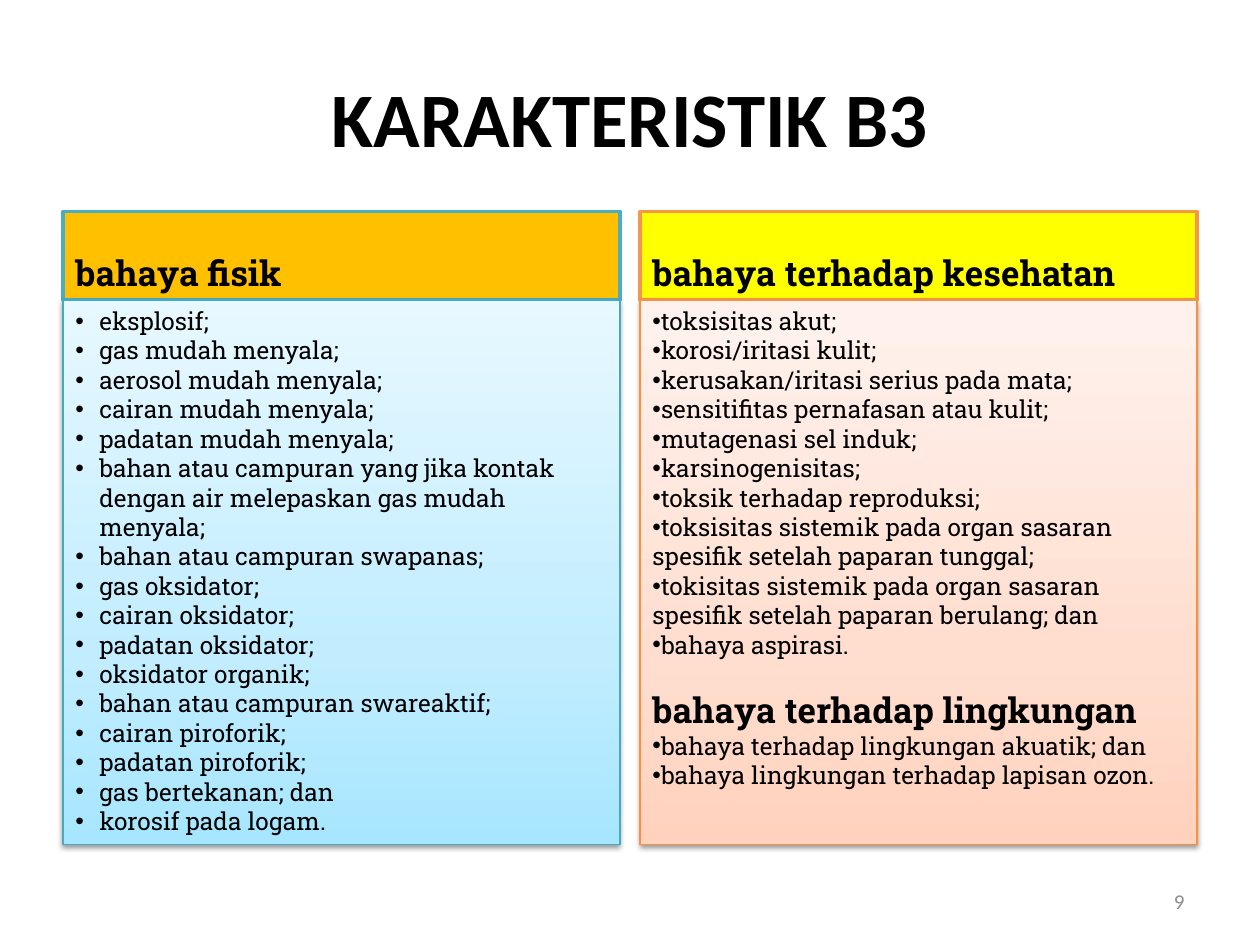
from copy import deepcopy
from lxml import etree
from pptx import Presentation
from pptx.dml.color import RGBColor
from pptx.enum.shapes import MSO_SHAPE
from pptx.enum.text import MSO_ANCHOR, PP_ALIGN
from pptx.oxml.ns import qn
from pptx.util import Inches, Pt

RECT = MSO_SHAPE.RECTANGLE
TOP, MIDDLE, BOTTOM = MSO_ANCHOR.TOP, MSO_ANCHOR.MIDDLE, MSO_ANCHOR.BOTTOM
LEFT, CENTER, RIGHT = PP_ALIGN.LEFT, PP_ALIGN.CENTER, PP_ALIGN.RIGHT
SLAB = "Roboto Slab"


def color(text):
    return RGBColor.from_string(text)


def write(shape, lines, size, font, bold=False, align=LEFT, anchor=TOP, ink="000000"):
    frame = shape.text_frame
    frame.word_wrap = True
    frame.vertical_anchor = anchor
    frame.text = "\n".join(lines)
    for para in frame.paragraphs:
        para.alignment = align
        for run in para.runs:
            run.font.size = Pt(size)
            run.font.name = font
            run.font.bold = bold
            run.font.color.rgb = color(ink)


physical = [
    "eksplosif;",
    "gas mudah menyala;",
    "aerosol mudah menyala;",
    "cairan mudah menyala;",
    "padatan mudah menyala;",
    "bahan atau campuran yang jika kontak dengan air melepaskan gas mudah menyala;",
    "bahan atau campuran swapanas;",
    "gas oksidator;",
    "cairan oksidator;",
    "padatan oksidator;",
    "oksidator organik;",
    "bahan atau campuran swareaktif;",
    "cairan piroforik;",
    "padatan piroforik;",
    "gas bertekanan; dan",
    "korosif pada logam.",
]
nature = "bahaya terhadap lingkungan"
health = [
    "toksisitas akut;",
    "korosi/iritasi kulit;",
    "kerusakan/iritasi serius pada mata;",
    "sensitifitas pernafasan atau kulit;",
    "mutagenasi sel induk;",
    "karsinogenisitas;",
    "toksik terhadap reproduksi;",
    "toksisitas sistemik pada organ sasaran spesifik setelah paparan tunggal;",
    "tokisitas sistemik pada organ sasaran spesifik setelah paparan berulang; dan",
    "bahaya aspirasi.",
    nature,
    "bahaya terhadap lingkungan akuatik; dan",
    "bahaya lingkungan terhadap lapisan ozon.",
]
columns = [
    (0.5, "bahaya fisik", "FFC000", "4BACC6", physical,
     ["A7E6FF", "C1EDFF", "E7F8FF"], "46AAC5", 0.19),
    (5.08, "bahaya terhadap kesehatan", "FFFF00", "F79646", health,
     ["FFD2BD", "FFDED0", "FFF2ED"], "F69240", 0),
]

prs = Presentation()
prs.slide_width, prs.slide_height = Inches(10), Inches(7.5)
slide = prs.slides.add_slide(prs.slide_layouts[6])
shapes = slide.shapes

title = shapes.add_textbox(Inches(0.5), Inches(0.3), Inches(9), Inches(1.25))
write(title, ["KARAKTERISTIK B3"], 44, "Calibri", True, CENTER, MIDDLE)

for left, label, fill, edge, items, shades, rim, indent in columns:
    head = shapes.add_shape(RECT, Inches(left), Inches(1.68), Inches(4.42), Inches(0.7))
    head.shadow.inherit = False
    head.fill.solid()
    head.fill.fore_color.rgb = color(fill)
    head.line.color.rgb = color(edge)
    head.line.width = Pt(2)
    write(head, [label], 20, SLAB, True, anchor=BOTTOM)

    body = shapes.add_shape(RECT, Inches(left), Inches(2.38), Inches(4.42), Inches(4.32))
    body.fill.gradient()
    body.fill.gradient_angle = 90
    stops = body._element.spPr.find(qn("a:gradFill")).find(qn("a:gsLst"))
    stops.append(deepcopy(stops[0]))
    for stop, place, shade in zip(body.fill.gradient_stops, (0, 0.35, 1), shades):
        stop.position = place
        stop.color.rgb = color(shade)
    body.line.color.rgb = color(rim)
    body.line.width = Pt(0.75)
    body.shadow.inherit = False
    effect = body._element.spPr.find(qn("a:effectLst"))
    shadow = etree.SubElement(effect, qn("a:outerShdw"), blurRad=str(Pt(3.1)),
                              dist=str(Pt(1.6)), dir="5400000", rotWithShape="0")
    black = etree.SubElement(shadow, qn("a:srgbClr"), val="000000")
    etree.SubElement(black, qn("a:alpha"), val="38000")

    write(body, items, 14, SLAB)
    for para in body.text_frame.paragraphs:
        if para.text == nature:
            para.space_before = Pt(16.8)
            para.runs[0].font.size = Pt(20)
            para.runs[0].font.bold = True
            continue
        props = para._p.get_or_add_pPr()
        props.set("marL", str(Inches(indent)))
        props.set("indent", str(-Inches(indent)))
        etree.SubElement(props, qn("a:buFont"), typeface="Arial")
        etree.SubElement(props, qn("a:buChar"), char="•")

number = shapes.add_textbox(Inches(7.17), Inches(6.95), Inches(2.33), Inches(0.4))
write(number, ["9"], 12, "Calibri", align=RIGHT, anchor=MIDDLE, ink="8C8C8C")

prs.save("out.pptx")
